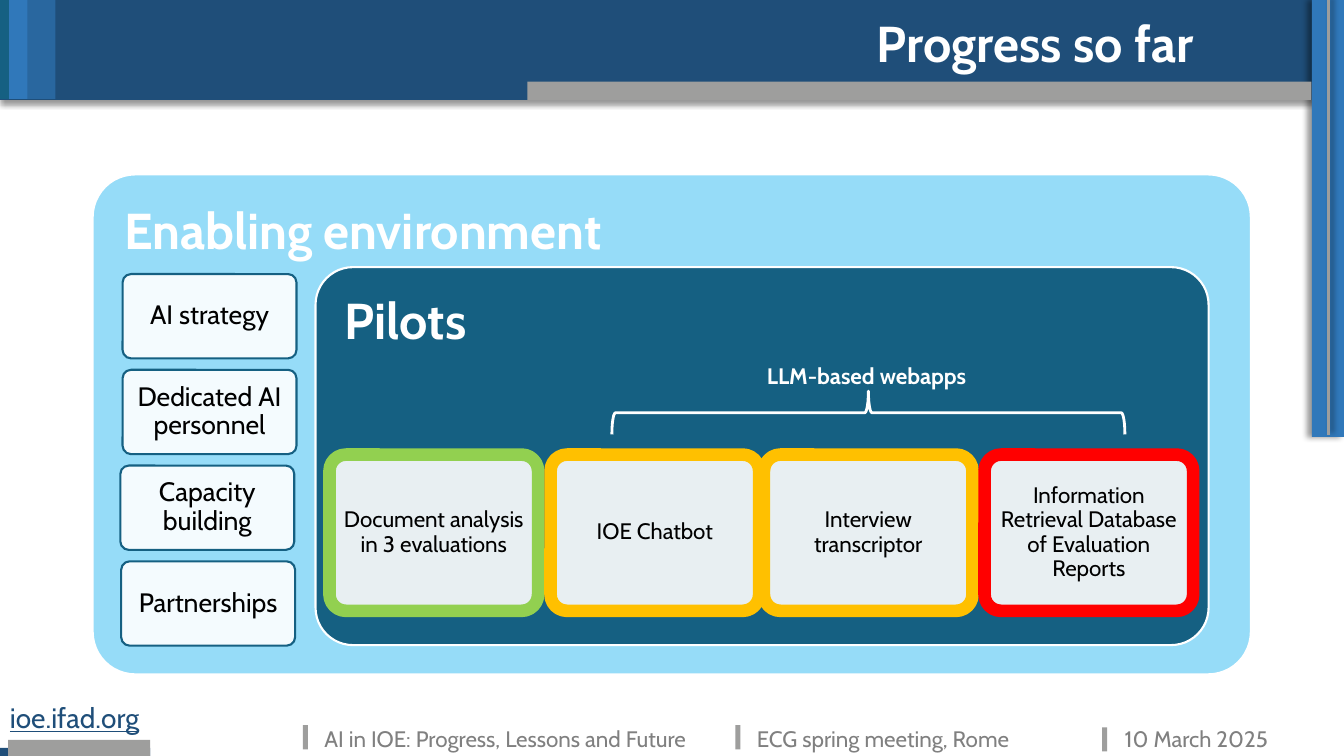
from dataclasses import dataclass
from typing import Optional

from lxml.etree import SubElement
from pptx import Presentation
from pptx.dml.color import RGBColor
from pptx.enum.shapes import MSO_CONNECTOR, MSO_SHAPE
from pptx.enum.text import MSO_ANCHOR, MSO_AUTO_SIZE, PP_ALIGN
from pptx.oxml.ns import qn
from pptx.shapes.autoshape import Shape
from pptx.slide import Slide
from pptx.text.text import TextFrame
from pptx.util import Pt

FONT = "Cabin"
WHITE = RGBColor(0xFF, 0xFF, 0xFF)
BLACK = RGBColor(0, 0, 0)
NAVY = RGBColor(0x1F, 0x4E, 0x79)
BLUE = RGBColor(0x30, 0x78, 0xBA)
STEEL = RGBColor(0x29, 0x67, 0x9F)
TEAL = RGBColor(0x15, 0x60, 0x82)
SKY = RGBColor(0x96, 0xDC, 0xF8)
GREY = RGBColor(0x9E, 0x9E, 0x9D)
DIM = RGBColor(0x80, 0x80, 0x80)
GREEN = RGBColor(0x92, 0xD0, 0x50)
AMBER = RGBColor(0xFF, 0xC0, 0x00)
RED = RGBColor(0xFF, 0x00, 0x00)


@dataclass
class Bar:
    left: float
    top: float
    width: float
    height: float
    fill: RGBColor
    shade: Optional[int] = None


@dataclass
class Card:
    text: str
    left: float
    top: float
    width: float
    height: float
    curve: float
    pad: float
    fill: RGBColor
    edge: RGBColor
    weight: float = 1.5
    size: float = 36
    head: bool = False


@dataclass
class Label:
    text: str
    left: float
    top: float
    width: float
    height: float
    size: float = 16
    tint: RGBColor = DIM
    bold: bool = False
    under: bool = False
    wrap: bool = True


BARS = [
    Bar(0, 534.2, 107.3, 5.8, NAVY),
    Bar(0, 0, 960, 71.3, NAVY, 90),
    Bar(937, 0, 23, 312, BLUE, 180),
    Bar(376.6, 58.3, 560.2, 13, GREY),
    Bar(0, 0, 20, 70.6, TEAL),
    Bar(6.6, 0, 20, 70.6, BLUE),
    Bar(19.6, 0, 20, 70.6, STEEL),
    Bar(5.8, 528.5, 101.5, 11.5, GREY),
]
TICKS = [(216.4, 518), (525.2, 518), (787.3, 519.5)]
SIDE = [("AI strategy", 87.6), ("Dedicated AI personnel", 87.6),
        ("Capacity building", 86), ("Partnerships", 86.6)]
TESTS = [("Document analysis in 3 evaluations", 235.4, GREEN),
         ("IOE Chatbot", 393.3, AMBER),
         ("Interview transcriptor", 545.7, AMBER),
         ("Information Retrieval Database of Evaluation Reports", 703.3, RED)]
CARDS = [
    Card("Enabling environment", 66.2, 124.6, 827.3, 357.1, 30.4, 22.3,
         SKY, WHITE, head=True),
    *[Card(text, left, 195.8 + 68.4 * row, 124.2, 60.2, 6, 7.2,
           WHITE, TEAL, size=19) for row, (text, left) in enumerate(SIDE)],
    Card("Pilots", 225.4, 190.8, 637.9, 270, 26.8, 20.9,
         TEAL, WHITE, head=True),
    *[Card(text, left, 324.7, 149, 111.6, 11.7, 9.4, WHITE, edge, 9, 16)
      for text, left, edge in TESTS],
]
LABELS = [
    Label("ECG spring meeting, Rome", 533.5, 514.1, 231.8, 24.5),
    Label("10 March 2025", 796.3, 514.1, 157.7, 24.5),
    Label("AI in IOE: Progress, Lessons and Future", 224.6, 514.1, 289.4, 24.5),
    Label("ioe.ifad.org", 0, 496.8, 123.1, 33.8, 20, NAVY, under=True),
    Label("LLM-based webapps", 540.7, 254.9, 164.2, 26.6, 16, WHITE,
          bold=True, wrap=False),
]


def place(shape: Shape, left: float, top: float, width: float, height: float) -> None:
    shape.left, shape.top = Pt(left), Pt(top)
    shape.width, shape.height = Pt(width), Pt(height)


def write(frame: TextFrame, text: str, size: float, tint: RGBColor,
          bold: bool = False, under: bool = False) -> None:
    frame.text = text
    line = frame.paragraphs[0]
    line.alignment = PP_ALIGN.LEFT
    font = line.font
    font.name, font.size, font.bold = FONT, Pt(size), bold
    font.underline = under
    font.color.rgb = tint


def cast(props, angle: int) -> None:
    glow = props.find(qn("a:effectLst"))
    if glow is None:
        glow = SubElement(props, qn("a:effectLst"))
    outer = SubElement(glow, qn("a:outerShdw"), blurRad=str(Pt(4)),
                       dist=str(Pt(3)), dir=str(angle * 60000), rotWithShape="0")
    black = SubElement(outer, qn("a:srgbClr"), val="000000")
    SubElement(black, qn("a:alpha"), val="40000")


def draw_bar(slide: Slide, bar: Bar) -> None:
    shape = slide.shapes.add_shape(MSO_SHAPE.RECTANGLE, Pt(bar.left), Pt(bar.top),
                                   Pt(bar.width), Pt(bar.height))
    shape.fill.solid()
    shape.fill.fore_color.rgb = bar.fill
    shape.line.fill.background()
    shape.shadow.inherit = False
    if bar.shade is not None:
        cast(shape._element.spPr, bar.shade)


def draw_card(slide: Slide, card: Card) -> None:
    shape = slide.shapes.add_shape(MSO_SHAPE.ROUNDED_RECTANGLE, Pt(card.left),
                                   Pt(card.top), Pt(card.width), Pt(card.height))
    shape.adjustments[0] = card.curve / card.height
    shape.shadow.inherit = False
    shape.fill.solid()
    shape.fill.fore_color.rgb = card.fill
    shape.line.color.rgb = card.edge
    shape.line.width = Pt(card.weight)
    frame = shape.text_frame
    frame.word_wrap = True
    inset = Pt(card.pad - 0.29 * card.curve)
    frame.margin_left = frame.margin_right = inset
    frame.margin_top = frame.margin_bottom = inset
    write(frame, card.text, card.size, WHITE if card.head else BLACK, card.head)
    line = frame.paragraphs[0]
    line.line_spacing = 0.9
    if card.head:
        frame.vertical_anchor = MSO_ANCHOR.TOP
    else:
        frame.vertical_anchor = MSO_ANCHOR.MIDDLE
        line.alignment = PP_ALIGN.CENTER
        tone = shape._element.spPr.find(qn("a:solidFill"))[0]
        SubElement(tone, qn("a:alpha"), val="90000")


def draw_label(slide: Slide, label: Label) -> None:
    box = slide.shapes.add_textbox(Pt(label.left), Pt(label.top),
                                   Pt(label.width), Pt(label.height))
    box.text_frame.word_wrap = label.wrap
    write(box.text_frame, label.text, label.size, label.tint, label.bold, label.under)


def draw_stripe(slide: Slide) -> None:
    stripe = slide.shapes.add_connector(MSO_CONNECTOR.STRAIGHT, Pt(949), Pt(0),
                                        Pt(949), Pt(311))
    stripe.line.color.rgb = GREY
    stripe.line.width = Pt(2.25)
    cast(stripe._element.spPr, 315)


def draw_brace(slide: Slide) -> None:
    brace = slide.shapes.add_shape(MSO_SHAPE.RIGHT_BRACE, Pt(604.8), Pt(111.6),
                                   Pt(31), Pt(366.5))
    brace.rotation = 90
    brace._element.spPr.find(qn("a:xfrm")).set("flipH", "1")
    brace.shadow.inherit = False
    brace.fill.background()
    brace.line.color.rgb = WHITE
    brace.line.width = Pt(2)


def draw_title(slide: Slide) -> None:
    title = slide.shapes.title
    place(title, 619.2, 5, 258.5, 51.1)
    frame = title.text_frame
    frame.word_wrap = False
    frame.auto_size = MSO_AUTO_SIZE.SHAPE_TO_FIT_TEXT
    frame.vertical_anchor = MSO_ANCHOR.TOP
    write(frame, "Progress so far", 36, WHITE, True)
    slide.shapes._spTree.append(title._element)


def main() -> None:
    deck = Presentation()
    deck.slide_width, deck.slide_height = Pt(960), Pt(540)
    slide = deck.slides.add_slide(deck.slide_layouts[5])
    for bar in BARS + [Bar(left, top, 3.6, 17.3, GREY) for left, top in TICKS]:
        draw_bar(slide, bar)
    draw_stripe(slide)
    draw_title(slide)
    for card in CARDS:
        draw_card(slide, card)
    draw_brace(slide)
    for label in LABELS:
        draw_label(slide, label)
    deck.save("out.pptx")


if __name__ == "__main__":
    main()
